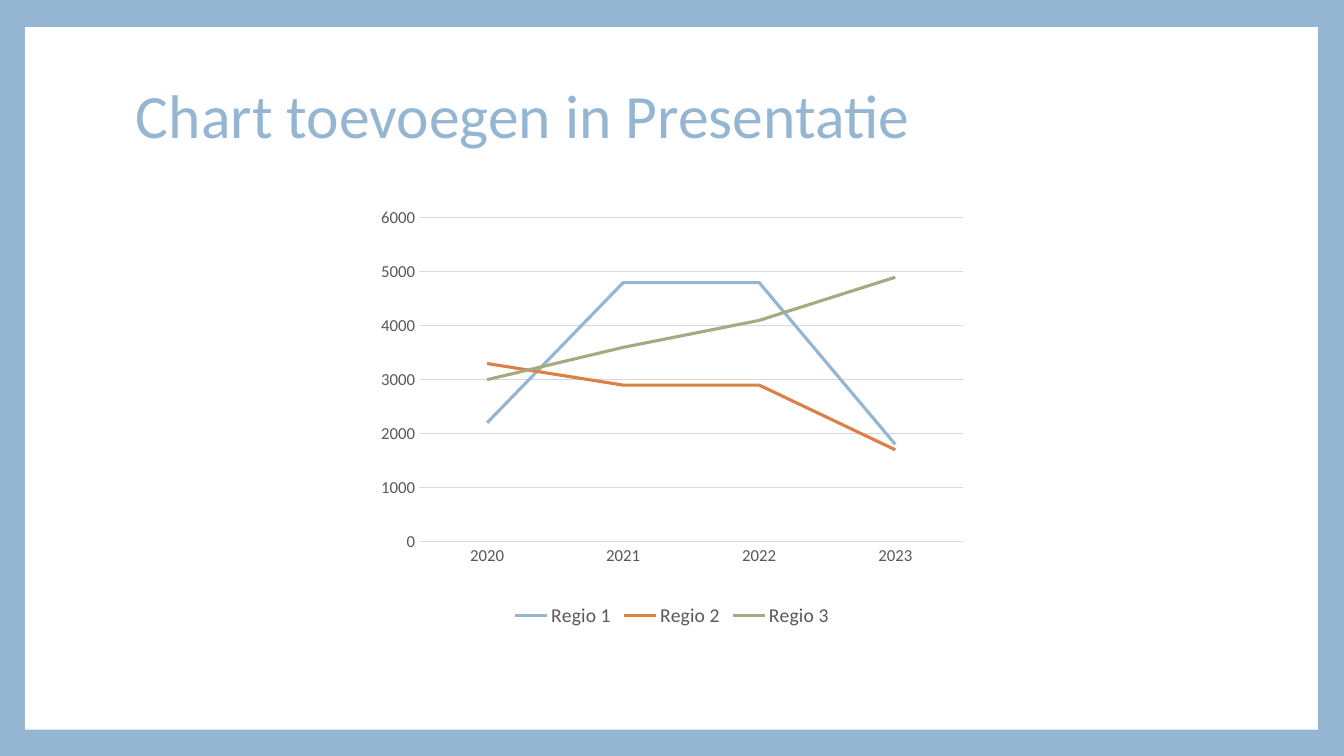
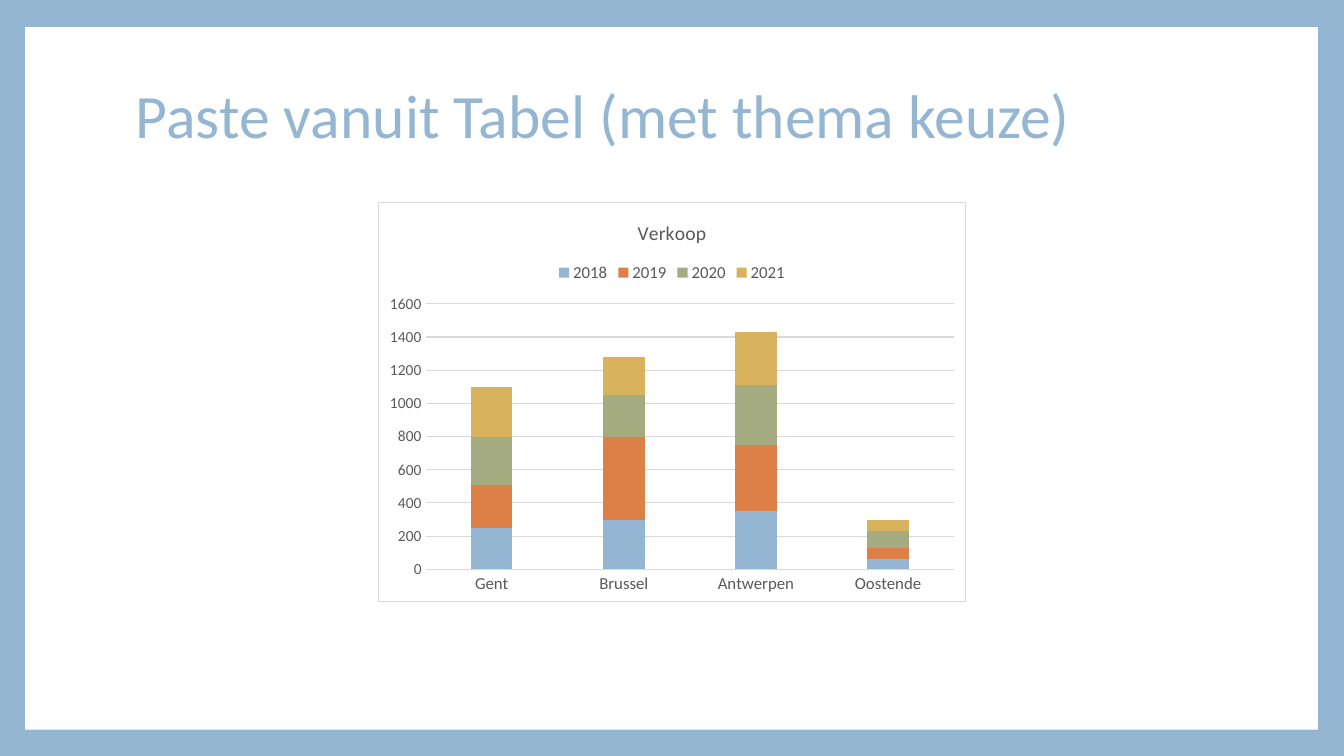
import pptx
import pptx.chart.data
import pptx.dml.color
import pptx.enum.chart
import pptx.enum.shapes
import pptx.enum.text
import pptx.oxml
import pptx.oxml.ns
import pptx.util

RGB = pptx.dml.color.RGBColor
Pt = pptx.util.Pt
Kind = pptx.enum.chart.XL_CHART_TYPE
Side = pptx.enum.chart.XL_LEGEND_POSITION
Tick = pptx.enum.chart.XL_TICK_MARK

BLUE = RGB(0x94, 0xB6, 0xD2)
ORANGE = RGB(0xDD, 0x80, 0x47)
GREEN = RGB(0xA5, 0xAB, 0x81)
GOLD = RGB(0xD8, 0xB2, 0x5C)
WHITE = RGB(0xFF, 0xFF, 0xFF)
GRAY = RGB(0x59, 0x59, 0x59)
PALE = RGB(0xD9, 0xD9, 0xD9)
HUES = (BLUE, ORANGE, GREEN, GOLD)
FACE = "Calibri"

WIDE, HIGH = 13.33, 7.5
PANEL = (0.25, 0.27, 12.82, 6.97)
HEAD = (1.25, 0.67, 10.8, 1.01)
TOP = 2

SLIDES = [
    dict(head="Chart toevoegen in Presentatie", kind=Kind.LINE,
         size=(6.06, 4.27), side=Side.BOTTOM, sizes=(12, 12, 14),
         cats=("2020", "2021", "2022", "2023"),
         rows={"Regio 1": (2200, 4800, 4800, 1800),
               "Regio 2": (3300, 2900, 2900, 1700),
               "Regio 3": (3000, 3600, 4100, 4900)},
         plot=dict(x=0.086, y=0.038, w=0.891, h=0.752)),
    dict(head="Paste vanuit Tabel (met thema keuze)",
         kind=Kind.COLUMN_STACKED,
         size=(5.84, 3.97), side=Side.TOP, sizes=(12, 11, 12),
         cats=("Gent", "Brussel", "Antwerpen", "Oostende"),
         rows={"2018": (250, 300, 350, 60),
               "2019": (260, 500, 400, 70),
               "2020": (290, 250, 360, 100),
               "2021": (300, 230, 320, 70)},
         title="Verkoop", bars=dict(gap_width=219, overlap=100)),
]


def inch(box):
    return [pptx.util.Inches(n) for n in box]


def style(font, size, hue=GRAY):
    for key, val in dict(name=FACE, size=Pt(size), bold=False).items():
        setattr(font, key, val)
    font.color.rgb = hue


def stroke(line, hue, width=0.75):
    line.color.rgb = hue
    line.width = Pt(width)


def frame(deck, text):
    """Add a slide with the blue edge, white panel and title."""
    slide = deck.slides.add_slide(deck.slide_layouts[6])
    back = slide.background.fill
    back.solid()
    back.fore_color.rgb = BLUE
    panel = slide.shapes.add_shape(
        pptx.enum.shapes.MSO_SHAPE.RECTANGLE, *inch(PANEL))
    panel.shadow.inherit = False
    panel.fill.solid()
    panel.fill.fore_color.rgb = WHITE
    panel.line.fill.background()
    body = slide.shapes.add_textbox(*inch(HEAD)).text_frame
    body.word_wrap = True
    body.vertical_anchor = pptx.enum.text.MSO_ANCHOR.MIDDLE
    para = body.paragraphs[0]
    para.line_spacing = 0.9
    run = para.add_run()
    run.text = text
    style(run.font, 44, BLUE)
    return slide


def place(chart, plot):
    """Fix the inner plot area, as shares of the chart."""
    area = chart.plots[0]._element.getparent()
    for old in area.findall(pptx.oxml.ns.qn("c:layout")):
        area.remove(old)
    modes = "".join(f'<c:{k}Mode val="edge"/>' for k in "xy")
    spots = "".join(f'<c:{k} val="{v}"/>' for k, v in plot.items())
    area.insert(0, pptx.oxml.parse_xml(
        f'<c:layout {pptx.oxml.ns.nsdecls("c")}><c:manualLayout>'
        f'<c:layoutTarget val="inner"/>{modes}{spots}'
        '</c:manualLayout></c:layout>'))


def border(chart):
    """Give the whole chart a white fill and a thin edge."""
    root = chart._chartSpace
    root.find(pptx.oxml.ns.qn("c:txPr")).addprevious(pptx.oxml.parse_xml(
        f'<c:spPr {pptx.oxml.ns.nsdecls("c", "a")}>'
        f'<a:solidFill><a:srgbClr val="{WHITE}"/></a:solidFill>'
        f'<a:ln w="{int(Pt(0.75))}"><a:solidFill>'
        f'<a:srgbClr val="{PALE}"/></a:solidFill></a:ln></c:spPr>'))


def draw(slide, item):
    data = pptx.chart.data.CategoryChartData()
    data.categories = item["cats"]
    for name, vals in item["rows"].items():
        data.add_series(name, vals)
    wide, high = item["size"]
    box = inch(((WIDE - wide) / 2, TOP, wide, high))
    chart = slide.shapes.add_chart(item["kind"], *box, data).chart
    style(chart.font, 10)

    cat, val = chart.category_axis, chart.value_axis
    chart.has_legend = True
    chart.legend.position = item["side"]
    chart.legend.include_in_layout = False
    fonts = (cat.tick_labels.font, val.tick_labels.font, chart.legend.font)
    for font, size in zip(fonts, item["sizes"]):
        style(font, size)
    for axis in (cat, val):
        axis.major_tick_mark = axis.minor_tick_mark = Tick.NONE
    stroke(cat.format.line, PALE)
    val.format.line.fill.background()
    val.has_major_gridlines = True
    stroke(val.major_gridlines.format.line, PALE)

    plot = chart.plots[0]
    plot.vary_by_categories = False
    for key, num in item.get("bars", {}).items():
        setattr(plot, key, num)
    for row, hue in zip(plot.series, HUES):
        if item["kind"] == Kind.LINE:
            row.smooth = False
            row.marker.style = pptx.enum.chart.XL_MARKER_STYLE.NONE
            stroke(row.format.line, hue, 2.25)
        else:
            row.format.fill.solid()
            row.format.fill.fore_color.rgb = hue

    chart.has_title = "title" in item
    if chart.has_title:
        text = chart.chart_title.text_frame
        text.text = item["title"]
        style(text.paragraphs[0].runs[0].font, 14)
        chart.chart_title.include_in_layout = False
        border(chart)
    if "plot" in item:
        place(chart, item["plot"])


def main():
    deck = pptx.Presentation()
    deck.slide_width, deck.slide_height = inch((WIDE, HIGH))
    for item in SLIDES:
        draw(frame(deck, item["head"]), item)
    deck.save("out.pptx")


if __name__ == "__main__":
    main()
